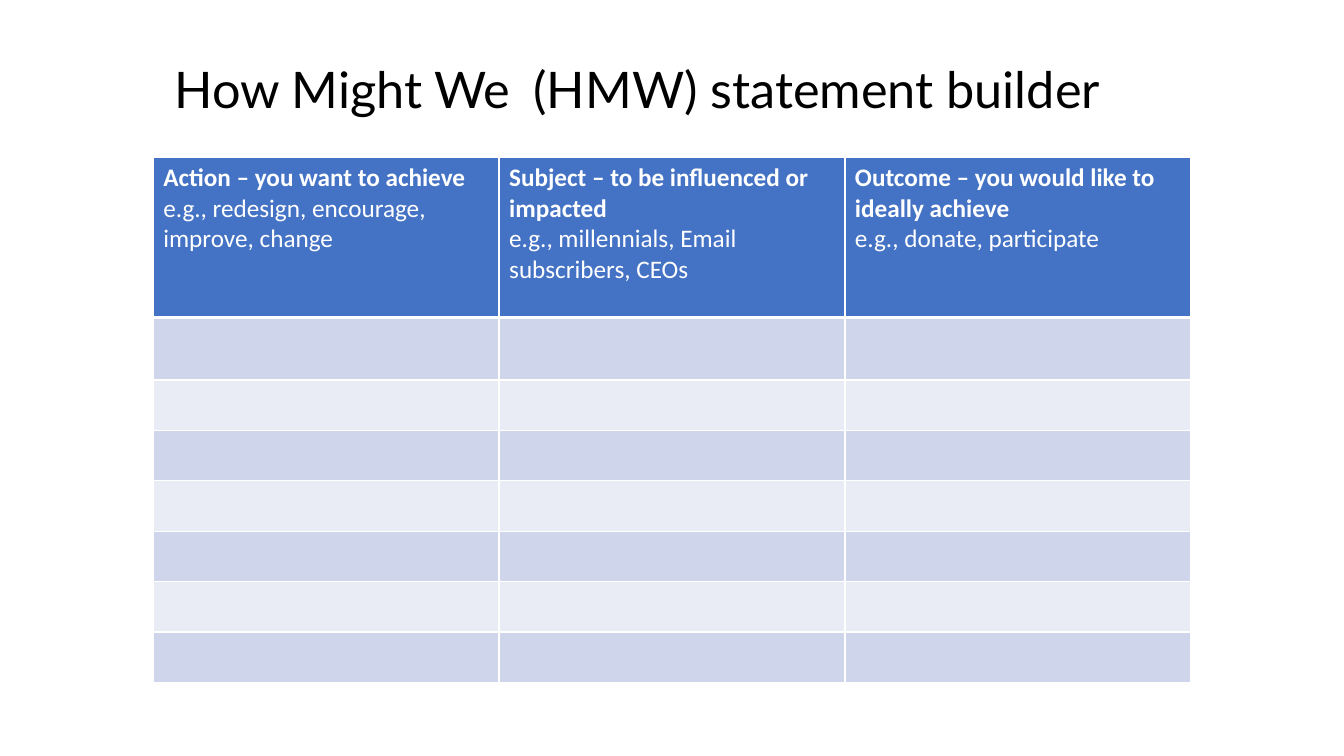
from dataclasses import dataclass

from lxml.etree import SubElement as sub
from pptx import Presentation
from pptx.dml.color import RGBColor as RGB
from pptx.enum.text import MSO_ANCHOR as Anchor
from pptx.enum.text import MSO_AUTO_SIZE as Auto
from pptx.enum.text import PP_ALIGN as Align
from pptx.oxml.ns import qn
from pptx.util import Inches, Pt

HUES = {
    "ink": "000000",
    "white": "FFFFFF",
    "head": "4472C4",
    "odd": "CFD5EA",
    "even": "E9EBF5",
}
WIDE, HIGH = Inches(13.33), Inches(7.5)
LEFT, TOP = 1.52, 1.56
COL = 3.43
ROWS = [1.59, 0.62] + [0.5] * 6


@dataclass
class Column:
    name: str
    hint: str


COLUMNS = [
    Column("Action – you want to achieve",
           "e.g., redesign, encourage, improve, change"),
    Column("Subject – to be influenced or impacted",
           "e.g., millennials, Email subscribers, CEOs"),
    Column("Outcome – you would like to ideally achieve",
           "e.g., donate, participate"),
]


def write(para, text: str, *, size: float = 18, font: str = "Calibri",
          hue: str = "white", bold: bool = False, gap: float = 0) -> None:
    para.alignment = Align.LEFT
    run = para.add_run()
    run.text = text
    face = run.font
    face.size, face.name, face.bold = Pt(size), font, bold
    face.color.rgb = RGB.from_string(HUES[hue])
    if gap:
        run._r.get_or_add_rPr().set("spc", str(int(gap * 100)))


def edge(cell, side: str, width: float) -> None:
    props = cell._tc.get_or_add_tcPr()
    line = sub(props, qn(f"a:ln{side}"), w=str(Pt(width)))
    fill = sub(line, qn("a:solidFill"))
    sub(fill, qn("a:srgbClr"), val=HUES["white"])


def paint(cell, row: int) -> None:
    for side in "LRTB":
        thick = (row == 0 and side == "B") or (row == 1 and side == "T")
        edge(cell, side, 3 if thick else 1)
    hue = "head" if row == 0 else "odd" if row % 2 else "even"
    cell.fill.solid()
    cell.fill.fore_color.rgb = RGB.from_string(HUES[hue])


def add_title(slide) -> None:
    box = slide.shapes.title
    box.left, box.top = Inches(1.63), Inches(0.53)
    box.width, box.height = Inches(10.08), Inches(0.71)
    frame = box.text_frame
    frame.word_wrap = True
    frame.auto_size = Auto.NONE
    frame.vertical_anchor = Anchor.TOP
    para = frame.paragraphs[0]
    look = {"size": 36, "font": "Lato", "hue": "ink"}
    write(para, "How Might We", **look)
    write(para, " ", gap=7, **look)
    write(para, "(HMW) statement builder", **look)


def add_grid(slide) -> None:
    grid = slide.shapes.add_table(
        len(ROWS), len(COLUMNS), Inches(LEFT), Inches(TOP),
        Inches(COL * len(COLUMNS)), Inches(sum(ROWS))).table
    for col in grid.columns:
        col.width = Inches(COL)
    for row, (line, height) in enumerate(zip(grid.rows, ROWS)):
        line.height = Inches(height)
        for cell in line.cells:
            paint(cell, row)
    for cell, col in zip(grid.rows[0].cells, COLUMNS):
        frame = cell.text_frame
        write(frame.paragraphs[0], col.name, bold=True)
        write(frame.add_paragraph(), col.hint)


def main() -> None:
    deck = Presentation()
    deck.slide_width, deck.slide_height = WIDE, HIGH
    slide = deck.slides.add_slide(deck.slide_layouts[5])
    add_grid(slide)
    add_title(slide)
    deck.save("out.pptx")


if __name__ == "__main__":
    main()
